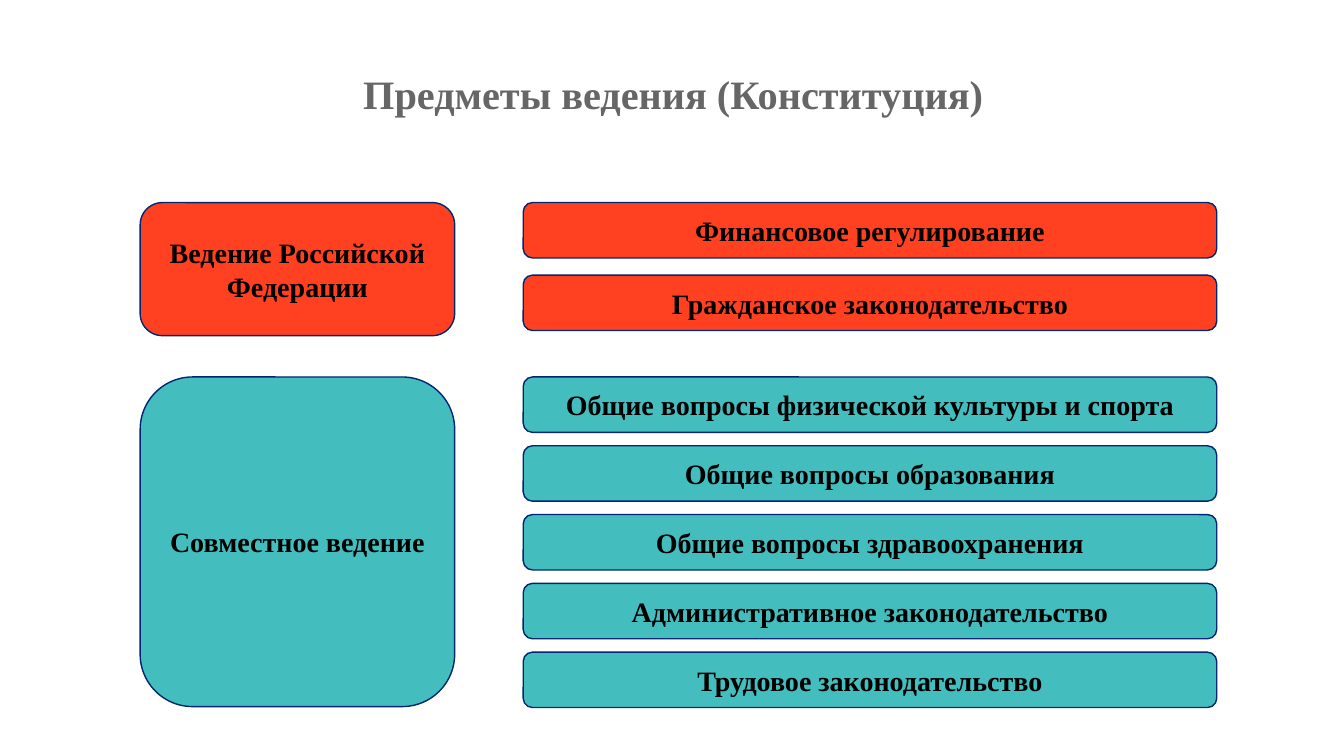
from pptx import Presentation
from pptx.dml.color import RGBColor as Rgb
from pptx.enum.shapes import MSO_SHAPE as Shape
from pptx.enum.text import MSO_ANCHOR as Anchor, PP_ALIGN as Align
from pptx.util import Inches, Pt

COLORS = {"title": "666666", "text": "000000", "edge": "002671",
          "federal": "FF4121", "joint": "43BDBD"}
GROUPS = [
    ("Ведение Российской Федерации", "federal", 26.8, 17.6, 9.6,
     ["Финансовое регулирование", "Гражданское законодательство"]),
    ("Совместное ведение", "joint", 49.87, 43.6, 9.1,
     ["Общие вопросы физической культуры и спорта",
      "Общие вопросы образования",
      "Общие вопросы здравоохранения",
      "Административное законодательство",
      "Трудовое законодательство"]),
]
OWNER_X, OWNER_W = 10.43, 23.4
TOPIC_X, TOPIC_W, TOPIC_H = 38.93, 51.6, 7.33


class Board:
    """Draws styled elements on one slide, placed in percent of its size."""

    def __init__(self, deck):
        self.deck = deck
        self.font = "Times New Roman"
        self.slide = deck.slides.add_slide(deck.slide_layouts[6])

    def place(self, x, y, w, h):
        wide, high = self.deck.slide_width, self.deck.slide_height
        return [round(part * size / 100) for part, size in
                ((x, wide), (y, high), (w, wide), (h, high))]

    def label(self, shape, text, size, color):
        frame = shape.text_frame
        frame.word_wrap = True
        frame.vertical_anchor = Anchor.MIDDLE
        para = frame.paragraphs[0]
        para.text = text
        para.alignment = Align.CENTER
        font = para.font
        font.name, font.size, font.bold = self.font, Pt(size), True
        font.color.rgb = Rgb.from_string(COLORS[color])
        return para

    def title(self, text, *area):
        box = self.slide.shapes.add_textbox(*self.place(*area))
        self.label(box, text, 28.8, "title").line_spacing = 0.9

    def card(self, text, fill, *area):
        card = self.slide.shapes.add_shape(
            Shape.ROUNDED_RECTANGLE, *self.place(*area))
        card.shadow.inherit = False
        card.fill.solid()
        card.fill.fore_color.rgb = Rgb.from_string(COLORS[fill])
        card.line.color.rgb = Rgb.from_string(COLORS["edge"])
        card.line.width = Pt(1)
        self.label(card, text, 20, "text")


def main():
    deck = Presentation()
    deck.slide_width, deck.slide_height = Inches(13.33), Inches(7.5)
    board = Board(deck)
    board.title("Предметы ведения (Конституция)", 5.1, 9.07, 90, 7.33)
    for owner, fill, top, height, step, topics in GROUPS:
        board.card(owner, fill, OWNER_X, top, OWNER_W, height)
        for row, topic in enumerate(topics):
            board.card(topic, fill, TOPIC_X, top + row * step,
                       TOPIC_W, TOPIC_H)
    deck.save("out.pptx")


if __name__ == "__main__":
    main()
